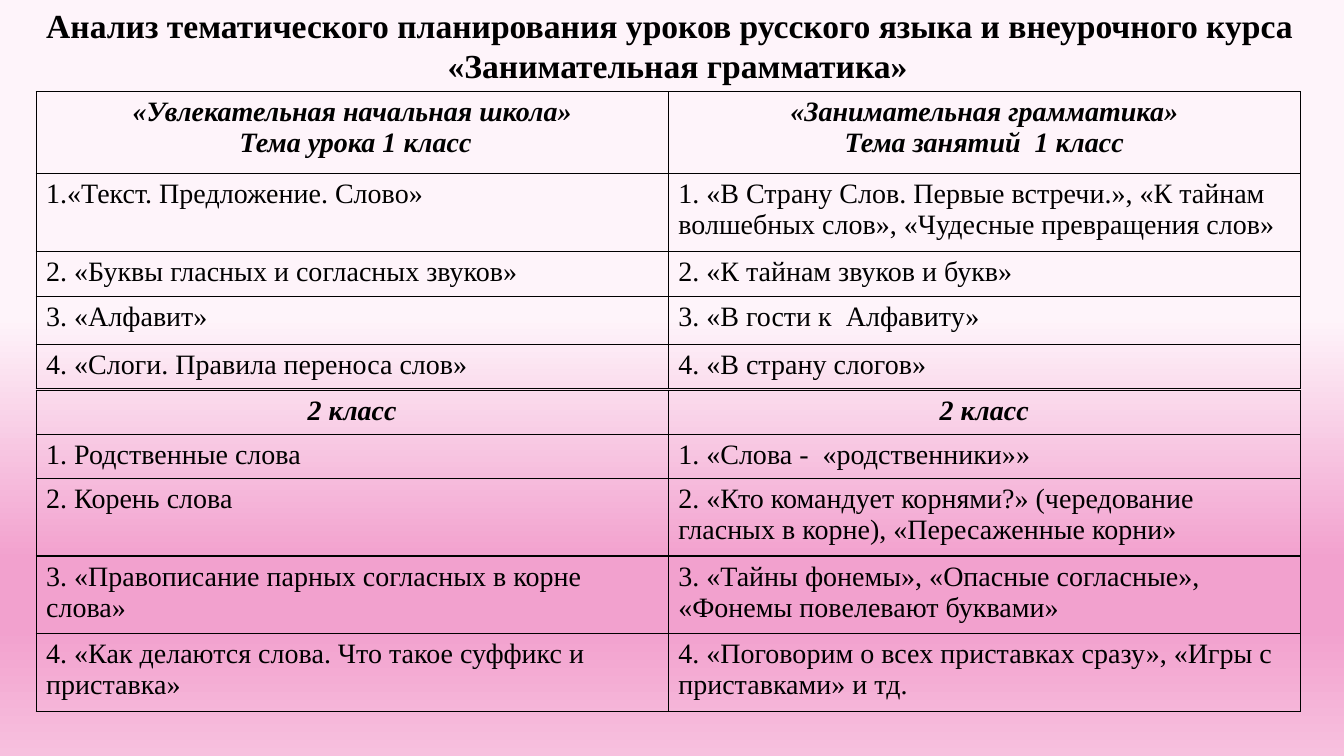
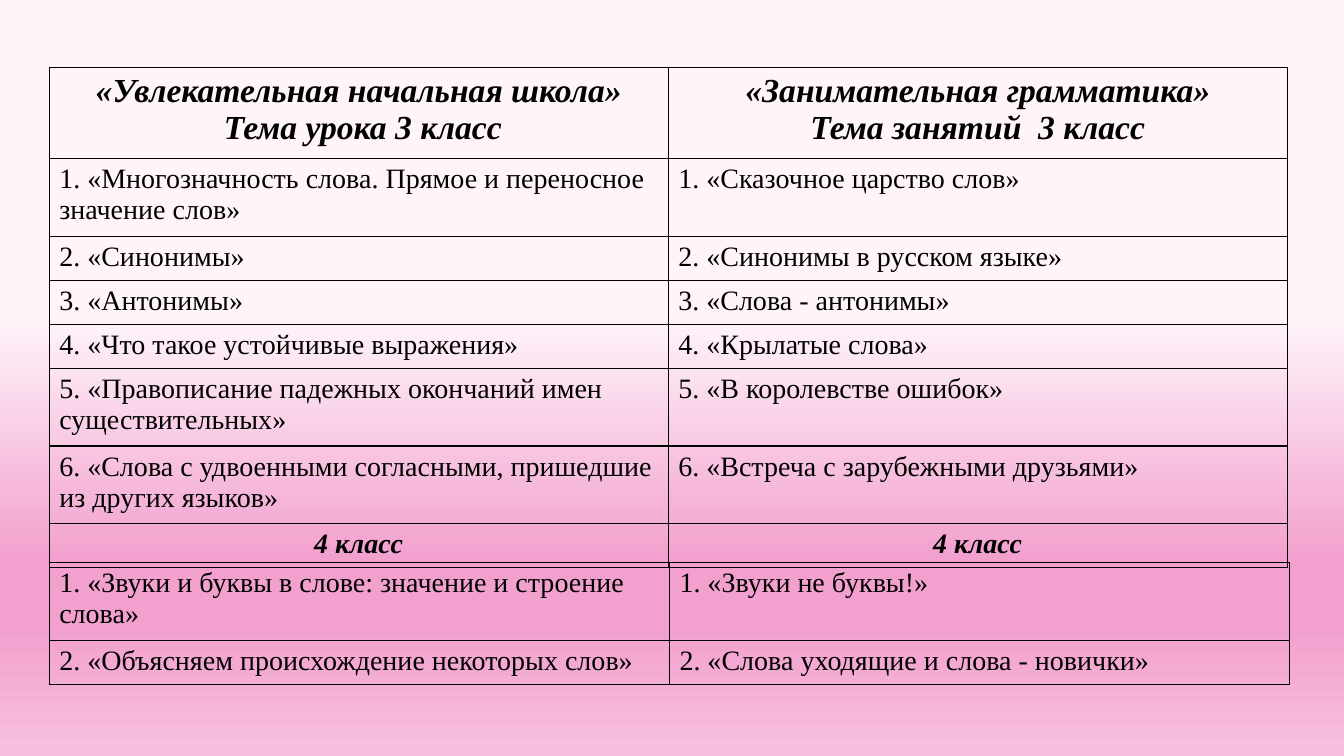
import pptx
import pptx.dml.color
import pptx.enum.text
import pptx.oxml
import pptx.oxml.ns
import pptx.util
from pptx.util import Cm

COLORS = {"text": "000000", "border": "000000",
          "pale": "FEF4FA", "pink": "F2A1CE", "rose": "F7C0DE"}
GRADIENT = [(42, "pale"), (74, "pink"), (83, "pink"), (100, "rose")]
FONT = "Times New Roman"
ALIGN = pptx.enum.text.PP_ALIGN
ONE_LINE, TWO_LINES = Cm(1.11), Cm(1.96)


def write_text(frame, text, size=20, bold=False, italic=False, aligns=(ALIGN.LEFT,)):
    """Write one paragraph per line; the last alignment serves all further lines."""
    for index, line in enumerate(text.split("\n")):
        paragraph = frame.paragraphs[0] if index == 0 else frame.add_paragraph()
        paragraph.alignment = aligns[min(index, len(aligns) - 1)]
        run = paragraph.add_run()
        run.text = line
        run.font.name = FONT
        run.font.size = pptx.util.Pt(size)
        run.font.bold = bold
        run.font.italic = italic
        run.font.color.rgb = pptx.dml.color.RGBColor.from_string(COLORS["text"])


def xml(markup):
    return pptx.oxml.parse_xml(
        markup.replace(" ", " " + pptx.oxml.ns.nsdecls("a") + " ", 1))


class Deck:
    TITLE_ONLY, BLANK = 5, 6

    def __init__(self):
        self.presentation = pptx.Presentation()
        self.presentation.slide_width = Cm(33.87)
        self.presentation.slide_height = Cm(19.05)
        self.slide = None

    def add_slide(self, layout):
        self.slide = self.presentation.slides.add_slide(
            self.presentation.slide_layouts[layout])
        self.paint_background()

    def paint_background(self):
        fill = self.slide.background.fill
        fill.gradient()
        fill.gradient_angle = 270
        stops = next(self.slide.background._cSld.iter(pptx.oxml.ns.qn("a:gsLst")))
        for stop in list(stops):
            stops.remove(stop)
        for percent, color in GRADIENT:
            stops.append(xml(f'<a:gs pos="{percent * 1000}">'
                             f'<a:srgbClr val="{COLORS[color]}"/></a:gs>'))

    def add_title(self, text, left, top, width, height):
        title = self.slide.shapes.title
        title.left, title.top, title.width, title.height = left, top, width, height
        frame = title.text_frame
        frame.word_wrap = True
        frame.auto_size = pptx.enum.text.MSO_AUTO_SIZE.NONE
        frame.vertical_anchor = pptx.enum.text.MSO_ANCHOR.TOP
        write_text(frame, text, size=24, bold=True, aligns=(ALIGN.LEFT, ALIGN.CENTER))

    def add_table(self, left, top, column_width, rows, heading_size=20):
        """Each row is (height, is heading, left text, right text)."""
        height = sum(row[0] for row in rows)
        table = self.slide.shapes.add_table(
            len(rows), 2, left, top, column_width * 2, height).table
        table.first_row = table.horz_banding = False
        for column in table.columns:
            column.width = column_width
        for row_index, (row_height, heading, *texts) in enumerate(rows):
            table.rows[row_index].height = row_height
            for column_index, text in enumerate(texts):
                cell = table.cell(row_index, column_index)
                cell.fill.background()
                self.draw_borders(cell)
                # Only the top heading takes the table's own heading size
                size = heading_size if row_index == 0 else 20
                write_text(cell.text_frame, text, size=size, bold=heading, italic=heading,
                           aligns=(ALIGN.CENTER if heading else ALIGN.LEFT,))

    def draw_borders(self, cell):
        properties = cell._tc.get_or_add_tcPr()
        for index, side in enumerate("LRTB"):
            properties.insert(index, xml(
                f'<a:ln{side} w="12700"><a:solidFill><a:srgbClr val="{COLORS["border"]}"/>'
                f'</a:solidFill></a:ln{side}>'))


def main():
    deck = Deck()

    # Grades 1 and 2
    deck.add_slide(Deck.TITLE_ONLY)
    deck.add_title("Анализ тематического планирования уроков русского языка и внеурочного курса\n"
                   "«Занимательная грамматика»", Cm(0.91), Cm(0), Cm(32.33), Cm(2.31))
    deck.add_table(Cm(0.91), Cm(2.31), Cm(15.93), [
        (Cm(2.06), True, "«Увлекательная начальная школа»\n Тема урока 1 класс",
         "«Занимательная грамматика»\nТема занятий  1 класс"),
        (TWO_LINES, False, "1.«Текст. Предложение. Слово»",
         "1. «В Страну Слов. Первые встречи.», «К тайнам волшебных слов», "
         "«Чудесные превращения слов»"),
        (Cm(1.15), False, "2. «Буквы гласных и согласных звуков»",
         "2. «К тайнам звуков и букв»"),
        (Cm(1.2), False, "3. «Алфавит»", "3. «В гости к  Алфавиту»"),
        (ONE_LINE, False, "4. «Слоги. Правила переноса слов»", "4. «В страну слогов»"),
    ])
    deck.add_table(Cm(0.91), Cm(9.83), Cm(15.93), [
        (ONE_LINE, True, "2 класс", "2 класс"),
        (ONE_LINE, False, "1. Родственные слова", "1. «Слова -  «родственники»»"),
        (TWO_LINES, False, "2. Корень слова",
         "2. «Кто командует корнями?» (чередование гласных в корне), «Пересаженные корни»"),
        (TWO_LINES, False, "3. «Правописание парных согласных в корне слова»",
         "3. «Тайны фонемы», «Опасные согласные», «Фонемы повелевают буквами»"),
        (TWO_LINES, False, "4. «Как делаются слова. Что такое суффикс и приставка»",
         "4. «Поговорим о всех приставках сразу», «Игры с приставками» и тд."),
    ])

    # Grades 3 and 4
    deck.add_slide(Deck.BLANK)
    deck.add_table(Cm(1.24), Cm(1.7), Cm(15.6), [
        (Cm(2.29), True, "«Увлекательная начальная школа»\n Тема урока 3 класс",
         "«Занимательная грамматика»\nТема занятий  3 класс"),
        (TWO_LINES, False, "1. «Многозначность слова. Прямое и переносное значение слов»",
         "1. «Сказочное царство слов»"),
        (ONE_LINE, False, "2. «Синонимы»", "2. «Синонимы в русском языке»"),
        (ONE_LINE, False, "3. «Антонимы»", "3. «Слова - антонимы»"),
        (ONE_LINE, False, "4. «Что такое устойчивые выражения»", "4. «Крылатые слова»"),
        (TWO_LINES, False, "5. «Правописание падежных окончаний имен существительных»",
         "5. «В королевстве ошибок»"),
        (TWO_LINES, False, "6. «Слова с удвоенными согласными, пришедшие из других языков»",
         "6. «Встреча с зарубежными друзьями»"),
        (ONE_LINE, True, "4 класс", "4 класс"),
    ], heading_size=24)
    deck.add_table(Cm(1.24), Cm(14.17), Cm(15.63), [
        (TWO_LINES, False, "1. «Звуки и буквы в слове: значение и строение слова»",
         "1. «Звуки не буквы!»"),
        (ONE_LINE, False, "2. «Объясняем происхождение некоторых слов»",
         "2. «Слова уходящие и слова - новички»"),
    ])

    deck.presentation.save("out.pptx")


if __name__ == "__main__":
    main()
